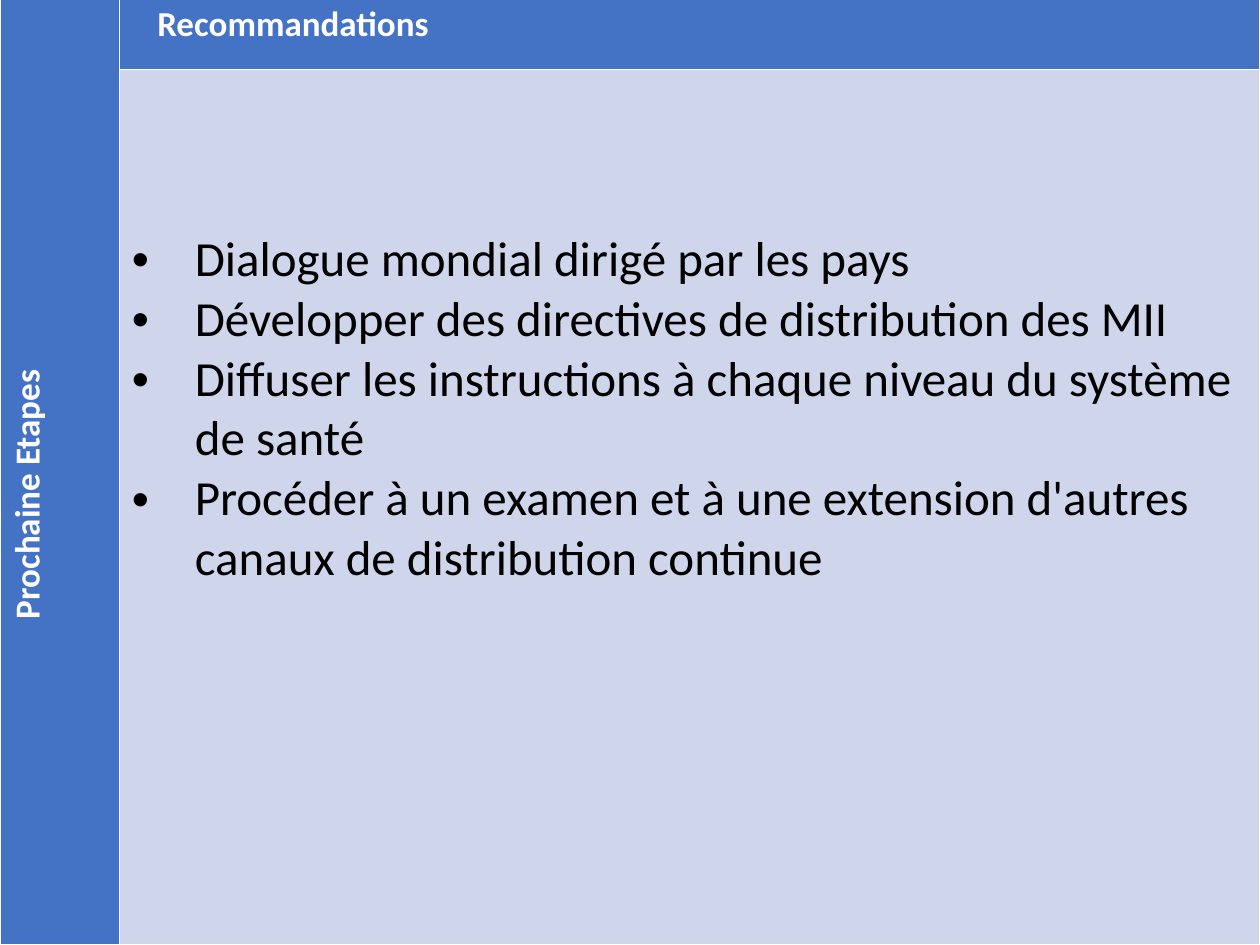
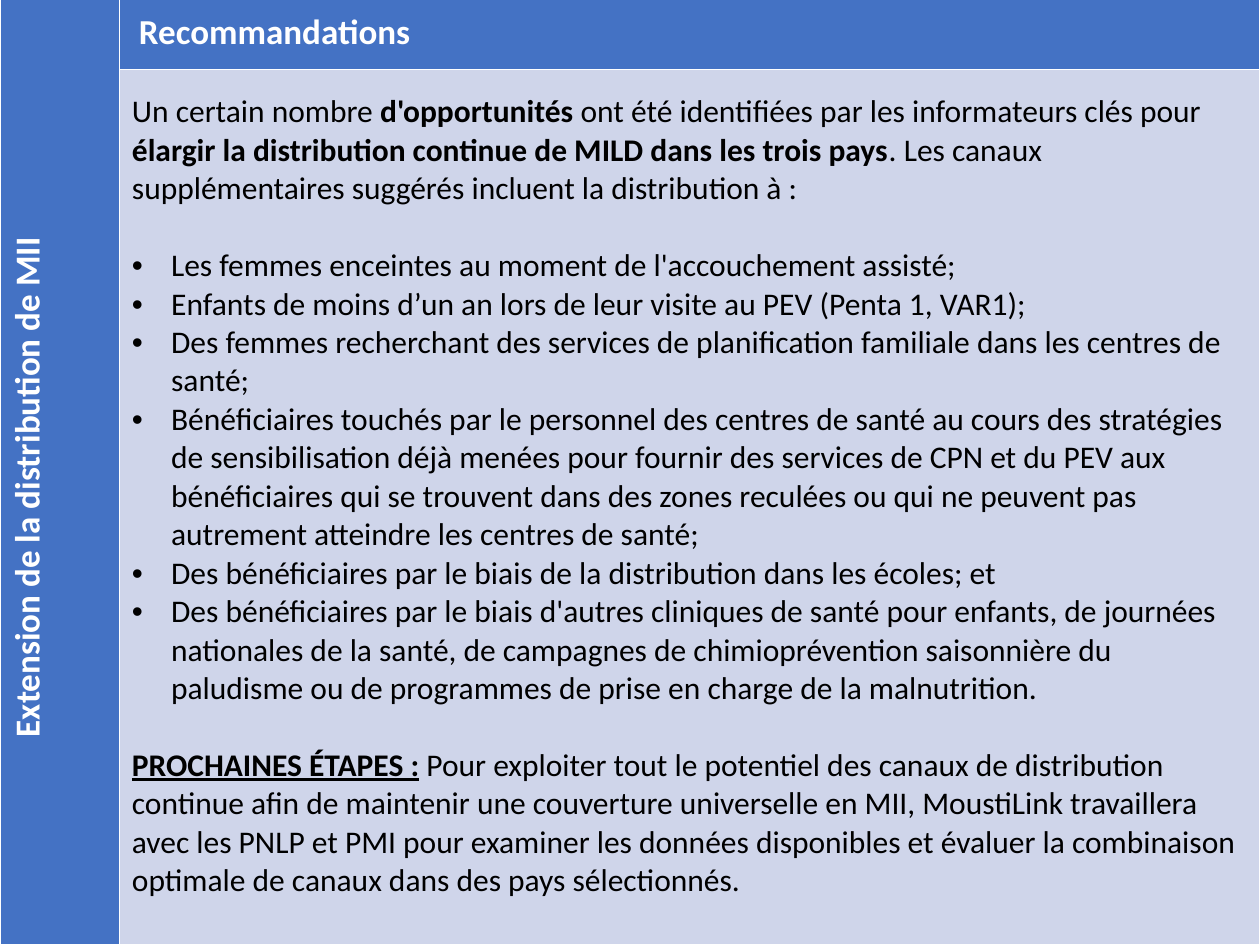
from pptx import Presentation
from pptx.dml.color import RGBColor
from pptx.enum.text import MSO_ANCHOR as Anchor
from pptx.oxml import parse_xml
from pptx.oxml.ns import nsdecls
from pptx.util import Cm, Pt

FONT = "Calibri"
WHITE = RGBColor(0xFF, 0xFF, 0xFF)
BLACK = RGBColor(0, 0, 0)
BLUE = RGBColor(0x44, 0x72, 0xC4)
PALE_BLUE = RGBColor(0xCF, 0xD5, 0xEA)

SLIDE_WIDTH, SLIDE_HEIGHT = 25.4, 19.05
LABEL_WIDTH = 2.41
BODY_HEIGHT = 17.65
CELL_MARGIN = 0.25
HEADING = "Recommandations"
HEADING_SIZE = 20
PARAGRAPH_GAP = 22

PLAIN, BOLD, UNDERLINED = "plain", "bold", "underlined"

SECTIONS = [
    {
        "label": "Prochaine Etapes",
        "label_indent": 6.32,
        "heading_indent": 0.51,
        "header_height": 1.8,
        "body_top": 3.23,
        "size": 28,
        "bullet_indent": 1.27,
        "intro": [],
        "bullets": [
            "Dialogue mondial dirigé par les pays",
            "Développer des directives de distribution des MII",
            "Diffuser les instructions à chaque niveau du système de santé",
            "Procéder à un examen et à une extension d'autres canaux de distribution continue",
        ],
        "closing": [],
    },
    {
        "label": "Extension de la distribution de MII",
        "label_indent": 3.94,
        "heading_indent": 0.14,
        "header_height": 1.5,
        "body_top": 0.47,
        "size": 18,
        "bullet_indent": 0.79,
        "intro": [
            ("Un certain nombre ", PLAIN),
            ("d'opportunités", BOLD),
            (" ont été identifiées par les informateurs clés pour ", PLAIN),
            ("élargir la distribution continue de MILD dans les trois pays", BOLD),
            (". Les canaux supplémentaires suggérés incluent la distribution à :", PLAIN),
        ],
        "bullets": [
            "Les femmes enceintes au moment de l'accouchement assisté;",
            "Enfants de moins d’un an lors de leur visite au PEV (Penta 1, VAR1);",
            "Des femmes recherchant des services de planification familiale dans les centres de santé;",
            "Bénéficiaires touchés par le personnel des centres de santé au cours des stratégies "
            "de sensibilisation déjà menées pour fournir des services de CPN et du PEV aux "
            "bénéficiaires qui se trouvent dans des zones reculées ou qui ne peuvent pas "
            "autrement atteindre les centres de santé;",
            "Des bénéficiaires par le biais de la distribution dans les écoles; et",
            "Des bénéficiaires par le biais d'autres cliniques de santé pour enfants, de journées "
            "nationales de la santé, de campagnes de chimioprévention saisonnière du paludisme "
            "ou de programmes de prise en charge de la malnutrition.",
        ],
        "closing": [
            ("PROCHAINES ÉTAPES :", UNDERLINED),
            (" Pour exploiter tout le potentiel des canaux de distribution continue afin de "
             "maintenir une couverture universelle en MII, MoustiLink travaillera avec les PNLP "
             "et PMI pour examiner les données disponibles et évaluer la combinaison optimale "
             "de canaux dans des pays sélectionnés.", PLAIN),
        ],
    },
]


def style_cell(cell, color):
    properties = cell._tc.get_or_add_tcPr()
    for side in ("lnL", "lnR", "lnT", "lnB"):
        properties.append(parse_xml(
            f'<a:{side} {nsdecls("a")} w="{Pt(1)}"><a:solidFill>'
            f'<a:srgbClr val="{WHITE}"/></a:solidFill></a:{side}>'))
    cell.fill.solid()
    cell.fill.fore_color.rgb = color
    cell.margin_left = cell.margin_right = Cm(CELL_MARGIN)


def add_spans(para, spans, size, color):
    for text, style in spans:
        span = para.add_run()
        span.text = text
        span.font.name = FONT
        span.font.size = Pt(size)
        span.font.color.rgb = color
        span.font.bold = style != PLAIN
        span.font.underline = style == UNDERLINED


def indent(para, left, first=0):
    properties = para._p.get_or_add_pPr()
    properties.set("marL", str(Cm(left)))
    properties.set("indent", str(Cm(first)))
    return properties


def add_bullet(para, left):
    properties = indent(para, left, -left)
    properties.append(parse_xml(f'<a:buFont {nsdecls("a")} typeface="Arial"/>'))
    properties.append(parse_xml(f'<a:buChar {nsdecls("a")} char="•"/>'))


def fill_title(cell, text, left):
    style_cell(cell, BLUE)
    cell.vertical_anchor = Anchor.MIDDLE
    para = cell.text_frame.paragraphs[0]
    indent(para, left)
    add_spans(para, [(text, BOLD)], HEADING_SIZE, WHITE)


def fill_body(cell, section):
    style_cell(cell, PALE_BLUE)
    cell.vertical_anchor = Anchor.TOP
    cell.margin_top = Cm(section["body_top"])
    bullets = [[(text, PLAIN)] for text in section["bullets"]]
    blocks = [([section["intro"]], False), (bullets, True), ([section["closing"]], False)]
    frame = cell.text_frame
    para = None
    for block, bulleted in blocks:
        for number, spans in enumerate(block):
            if not spans:
                continue
            starts_text = para is None
            para = frame.paragraphs[0] if starts_text else frame.add_paragraph()
            if number == 0 and not starts_text:
                para.space_before = Pt(PARAGRAPH_GAP)
            if bulleted:
                add_bullet(para, section["bullet_indent"])
            add_spans(para, spans, section["size"], BLACK)


def add_section(deck, section):
    page = deck.slides.add_slide(deck.slide_layouts[6])
    heights = (section["header_height"], BODY_HEIGHT)
    total = sum(heights)
    table = page.shapes.add_table(
        2, 2, Cm(0), Cm(SLIDE_HEIGHT - total), Cm(SLIDE_WIDTH), Cm(total)).table
    table.first_row = table.horz_banding = False
    for column, width in zip(table.columns, (LABEL_WIDTH, SLIDE_WIDTH - LABEL_WIDTH)):
        column.width = Cm(width)
    for row, height in zip(table.rows, heights):
        row.height = Cm(height)
    label = table.cell(0, 0)
    label.merge(table.cell(1, 0))
    fill_title(label, section["label"], section["label_indent"])
    label._tc.get_or_add_tcPr().set("vert", "vert270")
    fill_title(table.cell(0, 1), HEADING, section["heading_indent"])
    fill_body(table.cell(1, 1), section)


def main():
    deck = Presentation()
    deck.slide_width, deck.slide_height = Cm(SLIDE_WIDTH), Cm(SLIDE_HEIGHT)
    for section in SECTIONS:
        add_section(deck, section)
    deck.save("out.pptx")


if __name__ == "__main__":
    main()
